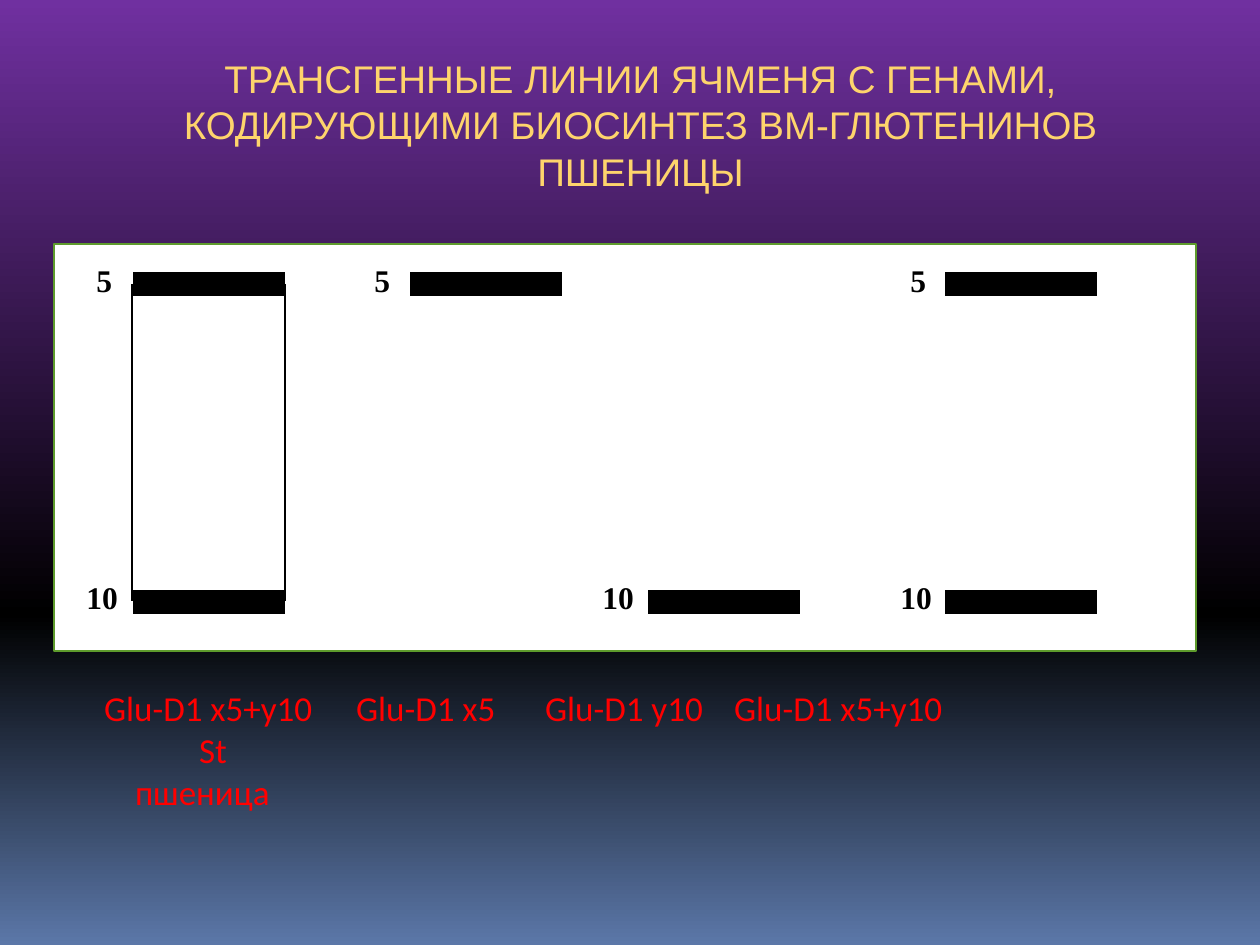
from copy import deepcopy

from lxml import etree
from pptx import Presentation
from pptx.dml.color import RGBColor
from pptx.enum.shapes import MSO_CONNECTOR, MSO_SHAPE
from pptx.enum.text import MSO_ANCHOR, MSO_AUTO_SIZE, PP_ALIGN
from pptx.oxml.ns import qn
from pptx.util import Emu, Pt

RECT, MINUS = MSO_SHAPE.RECTANGLE, MSO_SHAPE.MATH_MINUS
LINE = MSO_CONNECTOR.STRAIGHT
LEFT, CENTER = PP_ALIGN.LEFT, PP_ALIGN.CENTER
MIDDLE, BOTTOM = MSO_ANCHOR.MIDDLE, MSO_ANCHOR.BOTTOM
NO_FIT = MSO_AUTO_SIZE.NONE
PX = 914400 // 126
rgb = RGBColor.from_string


def px(*nums):
    """Turn pixel lengths into EMU."""
    return [Emu(n * PX) for n in nums]


def write(par, text, size, face, color, bold=False):
    run = par.add_run()
    run.text = text
    font = run.font
    font.size, font.name, font.bold = Pt(size), face, bold
    font.color.rgb = rgb(color)


prs = Presentation()
prs.slide_width, prs.slide_height = px(1260, 945)
slide = prs.slides.add_slide(prs.slide_layouts[0])
shapes = slide.shapes

# Background gradient, top to bottom
fill = slide.background.fill
fill.gradient()
fill.gradient_angle = 270
stops = slide.element.find(".//" + qn("a:gsLst"))
stops.append(deepcopy(stops[-1]))
for stop, (pos, color) in zip(fill.gradient_stops,
                              [(0, "7030A0"), (0.65, "000000"), (1, "5B77A8")]):
    stop.position = pos
    stop.color.rgb = rgb(color)

# Title
title = shapes.title
title.left, title.top, title.width, title.height = px(105, 45, 1071, 159)
frame = title.text_frame
frame.auto_size, frame.vertical_anchor = NO_FIT, MIDDLE
par = frame.paragraphs[0]
par.alignment = CENTER
write(par, "ТРАНСГЕННЫЕ ЛИНИИ ЯЧМЕНЯ С ГЕНАМИ, КОДИРУЮЩИМИ БИОСИНТЕЗ "
      "ВМ-ГЛЮТЕНИНОВ ПШЕНИЦЫ", 22, "Arial", "FED46C")

# Line names under the panel, set in columns by tab stops
names = slide.placeholders[1]
names.left, names.top, names.width, names.height = px(74, 611, 1171, 208)
frame = names.text_frame
frame.auto_size, frame.vertical_anchor = NO_FIT, BOTTOM
frame.margin_left, frame.margin_right = px(30, 13)
rows = [("Glu-D1 x5+y10\tGlu-D1 x5\tGlu-D1 y10\tGlu-D1 x5+y10", 0, [303, 530, 791]),
        ("St", 95, []),
        ("пшеница", 31, [])]
for i, (text, indent, tabs) in enumerate(rows):
    par = frame.add_paragraph() if i else frame.paragraphs[0]
    par.alignment, par.space_before = LEFT, Pt(0)
    props = par._p.get_or_add_pPr()
    props.set("marL", str(indent * PX))
    props.set("indent", "0")
    if tabs:
        group = etree.SubElement(props, qn("a:tabLst"))
        for tab in tabs:
            etree.SubElement(group, qn("a:tab"), pos=str(tab * PX), algn="l")
    write(par, text, 20, "Calibri", "FF0000")

# White panel, sent behind the text
panel = shapes.add_shape(RECT, *px(54, 244, 1142, 407))
panel.shadow.inherit = False
panel.fill.solid()
panel.fill.fore_color.rgb = rgb("FFFFFF")
panel.line.color.rgb = rgb("5E9B2C")
panel.line.width = Pt(1.5)
shapes._spTree.insert(2, panel._element)

# Protein bands: left edge, top edge
HIGH, LOW = 234, 552
for left, top in [(105, HIGH), (105, LOW), (382, HIGH),
                  (620, LOW), (917, HIGH), (917, LOW)]:
    band = shapes.add_shape(MINUS, *px(left, top, 208, 100))
    band.shadow.inherit = False
    band.fill.solid()
    band.fill.fore_color.rgb = rgb("000000")
    band.line.fill.background()

# Sides of the wheat lane
for x in (132, 285):
    side = shapes.add_connector(LINE, *px(x, 284, x, 601))
    side.line.color.rgb = rgb("000000")
    side.line.width = Pt(1.25)
    etree.SubElement(side._element.spPr, qn("a:effectLst"))

# Band numbers
for text, left, top, width in [("5", 84, 255, 42), ("10", 74, 572, 57),
                               ("5", 362, 255, 42), ("5", 898, 255, 42),
                               ("10", 590, 572, 57), ("10", 888, 572, 57)]:
    label = shapes.add_textbox(*px(left, top, width, 50))
    label.text_frame.word_wrap = False
    write(label.text_frame.paragraphs[0], text, 18, "Times New Roman", "000000", True)

prs.save("out.pptx")
